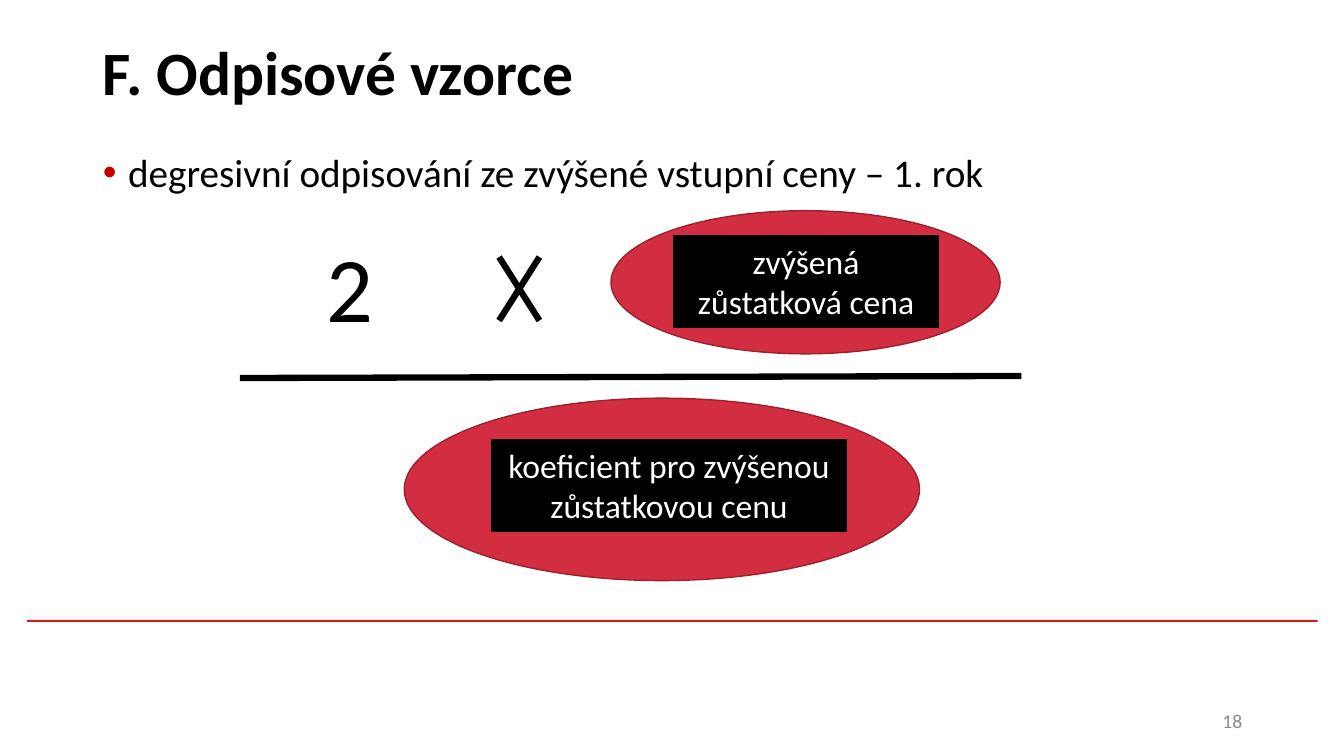
"""Build the slide with the depreciation formula for the first year."""
from lxml.etree import SubElement
from pptx import Presentation
from pptx.dml.color import RGBColor
from pptx.enum.shapes import MSO_CONNECTOR, MSO_SHAPE
from pptx.enum.text import MSO_ANCHOR, PP_ALIGN
from pptx.oxml.ns import qn
from pptx.util import Pt

PX = 9144
COLOURS = {
    "black": "000000",
    "white": "FFFFFF",
    "rule": "CD1F21",
    "bullet": "C00000",
    "oval": "D22D40",
    "oval_edge": "9B212F",
    "number": "8C8C8C",
}


def write(shape, text, size, colour, align=PP_ALIGN.LEFT, anchor=MSO_ANCHOR.TOP, bold=False):
    frame = shape.text_frame
    frame.word_wrap = True
    frame.vertical_anchor = anchor
    para = frame.paragraphs[0]
    para.alignment = align
    para.space_before = Pt(0)
    span = para.add_run()
    span.text = text
    span.font.name = "Calibri"
    span.font.size = Pt(size)
    span.font.bold = bold
    span.font.color.rgb = RGBColor.from_string(COLOURS[colour])
    return para


def add_filled(kind, bounds, fill, edge=None):
    shape = page.shapes.add_shape(kind, *[length * PX for length in bounds])
    shape.shadow.inherit = False
    shape.fill.solid()
    shape.fill.fore_color.rgb = RGBColor.from_string(COLOURS[fill])
    if edge:
        shape.line.color.rgb = RGBColor.from_string(COLOURS[edge])
        shape.line.width = Pt(1)
    else:
        shape.line.fill.background()
    return shape


deck = Presentation()
deck.slide_width = 1333 * PX
deck.slide_height = 750 * PX
page = deck.slides.add_slide(deck.slide_layouts[1])

add_filled(MSO_SHAPE.RECTANGLE, (27, 615, 1280, 2), "rule")

title, body = page.placeholders
for holder, top, height in ((title, 2, 145), (body, 147, 457)):
    holder.left, holder.top = 92 * PX, top * PX
    holder.width, holder.height = 1150 * PX, height * PX

para = write(title, "F. Odpisové vzorce", 44, "black", anchor=MSO_ANCHOR.MIDDLE, bold=True)
para.line_spacing = 0.9

para = write(body, "degresivní odpisování ze zvýšené vstupní ceny – 1. rok", 28, "black")
para.line_spacing = 0.9
settings = para._p.get_or_add_pPr()
settings.set("marL", str(25 * PX))
settings.set("indent", str(-25 * PX))
bullet_colour = SubElement(settings, qn("a:buClr"))
SubElement(bullet_colour, qn("a:srgbClr"), val=COLOURS["bullet"])
SubElement(settings, qn("a:buFont"), typeface="Arial")
SubElement(settings, qn("a:buChar"), char="•")

number = page.shapes.add_textbox(942 * PX, 695 * PX, 300 * PX, 40 * PX)
write(number, "18", 14, "number", PP_ALIGN.RIGHT, MSO_ANCHOR.MIDDLE)

factor = page.shapes.add_textbox(314 * PX, 223 * PX, 173 * PX, 121 * PX)
write(factor, "2", 66, "black")

for ends in ((535, 255, 495, 318), (495, 255, 535, 318), (238, 375, 1013, 373)):
    stroke = page.shapes.add_connector(MSO_CONNECTOR.STRAIGHT, *[end * PX for end in ends])
    stroke.line.color.rgb = RGBColor.from_string(COLOURS["black"])
    stroke.line.width = Pt(4.5)
    SubElement(stroke._element.spPr, qn("a:effectLst"))

terms = (
    ("zvýšená zůstatková cena", (606, 209, 386, 142), (668, 234, 263, 91)),
    ("koeficient pro zvýšenou zůstatkovou cenu", (401, 395, 511, 181), (488, 436, 351, 91)),
)
for text, oval_bounds, label_bounds in terms:
    add_filled(MSO_SHAPE.OVAL, oval_bounds, "oval", "oval_edge")
    label = add_filled(MSO_SHAPE.RECTANGLE, label_bounds, "black", "black")
    write(label, text, 24, "white", PP_ALIGN.CENTER)

deck.save("out.pptx")
